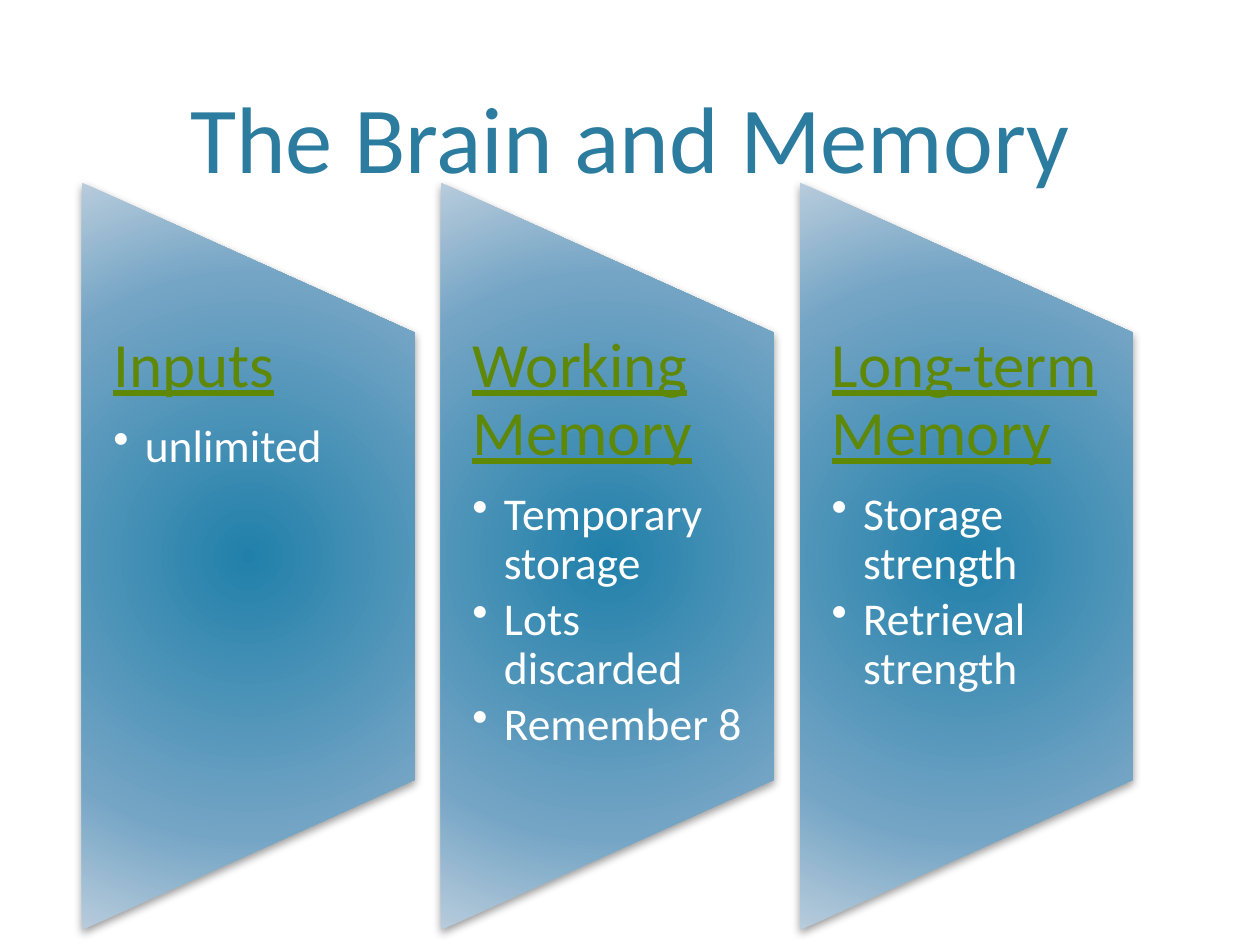
import pptx
import pptx.util
import pptx.dml.color
import pptx.enum.text
import pptx.oxml
from dataclasses import dataclass
from pptx.util import Inches

INK = {"title": "2C7C9F", "head": "5E8805", "body": "FFFFFF",
       "core": "2180AA", "mid": "75A5C5", "edge": "B8CCDC", "shade": "000000"}
FONT = "Calibri"
NS = 'xmlns:a="http://schemas.openxmlformats.org/drawingml/2006/main"'

# Panel grid, in inches
LEFT, STEP, WIDE = 0.65, 2.85, 2.64
TOP, BASE, SLOPE = 1.45, 7.38, 1.19
PAD = 0.25


@dataclass
class Panel:
    head: str
    items: list[str]


PANELS = [
    Panel("Inputs", ["unlimited"]),
    Panel("Working Memory", ["Temporary storage", "Lots discarded", "Remember 8"]),
    Panel("Long-term Memory", ["Storage strength", "Retrieval strength"]),
]


def add_xml(node, xml: str) -> None:
    """Append one DrawingML element, given without its namespace."""
    tag, rest = xml.split(">", 1)
    slash = "/" if tag.endswith("/") else ""
    node.append(pptx.oxml.parse_xml(f"{tag.rstrip('/')} {NS}{slash}>{rest}"))


def style(para, size: float, color: str, line: bool = False) -> None:
    for run in para.runs:
        run.font.name = FONT
        run.font.size = pptx.util.Pt(size)
        run.font.underline = line
        run.font.color.rgb = pptx.dml.color.RGBColor.from_string(INK[color])


def space(para, after: int) -> None:
    """Set line spacing and the gap after, in percent of the line."""
    para.alignment = pptx.enum.text.PP_ALIGN.LEFT
    para.line_spacing = 0.9
    add_xml(para._p.get_or_add_pPr(),
            f'<a:spcAft><a:spcPct val="{after * 1000}"/></a:spcAft>')


def paint(shape) -> None:
    """Radial fill, no outline, soft shadow."""
    stops = "".join(
        f'<a:gs pos="{pos * 1000}"><a:srgbClr val="{INK[name]}"/></a:gs>'
        for pos, name in ((0, "core"), (69, "mid"), (100, "edge")))
    rect = " ".join(f'{side}="100000"' for side in "ltrb")
    props = shape._element.spPr
    add_xml(props, f'<a:gradFill><a:gsLst>{stops}</a:gsLst><a:path path="circle">'
                   f'<a:fillToRect {rect}/></a:path></a:gradFill>')
    shape.line.fill.background()
    add_xml(props, '<a:effectLst><a:outerShdw blurRad="63500" dist="25400" dir="5400000">'
                   f'<a:srgbClr val="{INK["shade"]}"><a:alpha val="40000"/></a:srgbClr>'
                   '</a:outerShdw></a:effectLst>')


def draw_panel(slide, panel: Panel, left: float) -> None:
    right = left + WIDE
    pen = slide.shapes.build_freeform(Inches(left), Inches(BASE))
    pen.add_line_segments(
        [(Inches(x), Inches(y)) for x, y in
         ((left, TOP), (right, TOP + SLOPE), (right, BASE - SLOPE))], close=True)
    shape = pen.convert_to_shape()
    paint(shape)

    frame = shape.text_frame
    frame.word_wrap = True
    frame.vertical_anchor = pptx.enum.text.MSO_ANCHOR.TOP
    frame.margin_left = frame.margin_right = Inches(PAD)
    frame.margin_top = frame.margin_bottom = Inches(SLOPE)

    frame.text = panel.head
    head = frame.paragraphs[0]
    space(head, 35)
    style(head, 36, "head", True)

    for item in panel.items:
        para = frame.add_paragraph()
        para.text = item
        para.level = 1
        space(para, 15)
        style(para, 26, "body")
        props = para._p.get_or_add_pPr()
        props.set("marL", str(Inches(PAD)))
        props.set("indent", str(-Inches(PAD)))
        add_xml(props, '<a:buChar char="•"/>')


def main() -> None:
    deck = pptx.Presentation()
    deck.slide_width, deck.slide_height = Inches(10), Inches(7.5)
    slide = deck.slides.add_slide(deck.slide_layouts[5])

    # Title
    title = slide.shapes.title
    title.left, title.top = Inches(0.6), Inches(0.12)
    title.width, title.height = Inches(8.8), Inches(1.46)
    frame = title.text_frame
    frame.text = "The Brain and Memory"
    frame.vertical_anchor = pptx.enum.text.MSO_ANCHOR.BOTTOM
    frame.paragraphs[0].alignment = pptx.enum.text.PP_ALIGN.CENTER
    style(frame.paragraphs[0], 54, "title")

    # Memory stages
    for i, panel in enumerate(PANELS):
        draw_panel(slide, panel, LEFT + i * STEP)

    deck.save("out.pptx")


if __name__ == "__main__":
    main()
